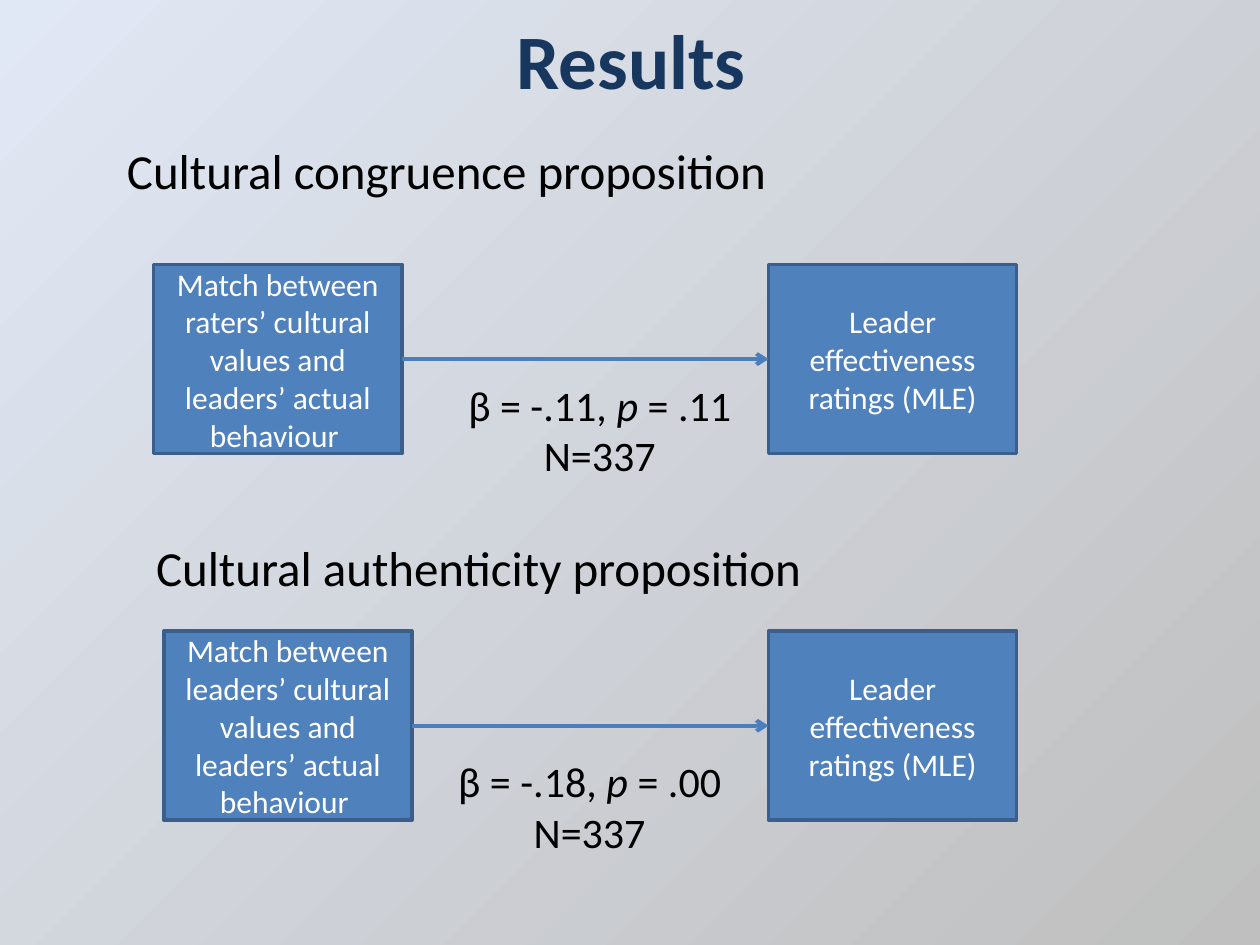
from lxml.etree import SubElement
from pptx import Presentation
from pptx.dml.color import RGBColor
from pptx.enum.shapes import MSO_CONNECTOR, MSO_SHAPE
from pptx.enum.text import MSO_ANCHOR, MSO_AUTO_SIZE, PP_ALIGN
from pptx.oxml.ns import qn
from pptx.util import Inches, Pt

BOX_WIDTH, BOX_HEIGHT = 1.97, 1.5
OUTCOME_LEFT = 6.1
OUTCOME = "Leader effectiveness ratings (MLE)"

# Each row: heading and its place, predictor and its place, statistics and their place
PROPOSITIONS = [
    dict(heading="Cultural congruence proposition", heading_at=(0.91, 1.07, 5.33, 0.57),
         predictor="Match between raters’ cultural values and leaders’ actual behaviour ",
         predictor_left=1.22, top=2.1, beta="-.11", p_value=".11",
         statistics_at=(3.5, 2.96, 2.52, 0.91)),
    dict(heading="Cultural authenticity proposition", heading_at=(1.14, 4.22, 5.47, 0.57),
         predictor="Match between leaders’ cultural values and leaders’ actual behaviour ",
         predictor_left=1.3, top=5.01, beta="-.18", p_value=".00",
         statistics_at=(3.5, 5.95, 2.36, 0.91)),
]


def color(hex_string):
    return RGBColor.from_string(hex_string)


def inches(lengths):
    return [Inches(length) for length in lengths]


def write(frame, lines, size, ink="000000", bold=None, align=PP_ALIGN.CENTER,
          anchor=MSO_ANCHOR.TOP, wrap=True):
    """Fill a text frame; each line is a list of (text, italic) runs."""
    frame.word_wrap = wrap
    frame.vertical_anchor = anchor
    for index, line in enumerate(lines):
        paragraph = frame.paragraphs[0] if index == 0 else frame.add_paragraph()
        paragraph.alignment = align
        for text, italic in line:
            run = paragraph.add_run()
            run.text = text
            font = run.font
            font.name, font.size, font.bold, font.italic = "Calibri", Pt(size), bold, italic
            font.color.rgb = color(ink)


def paint_background(slide):
    """Radial gradient that spreads from the bottom right corner."""
    fill = slide.background.fill
    fill.gradient()
    near, far = fill.gradient_stops
    near.position, far.position = 0, 1
    near.color.rgb, far.color.rgb = color("BFBFBF"), color("E1E8F5")
    gradient = slide.element.find(".//" + qn("a:gradFill"))
    SubElement(gradient.find(".//" + qn("a:srgbClr")), qn("a:alpha"), val="34000")
    gradient.remove(gradient.find(qn("a:lin")))
    circle = SubElement(gradient, qn("a:path"), path="circle")
    SubElement(circle, qn("a:fillToRect"), l="100000", t="100000")


def add_title(slide, text):
    title = slide.shapes.title
    title.left, title.top, title.width, title.height = inches((0.51, 0, 9, 0.93))
    write(title.text_frame, [[(text, None)]], 44, ink="17375E", bold=True,
          anchor=MSO_ANCHOR.MIDDLE)


def add_variable(slide, text, left, top):
    box = slide.shapes.add_shape(MSO_SHAPE.RECTANGLE,
                                 *inches((left, top, BOX_WIDTH, BOX_HEIGHT)))
    box.shadow.inherit = False
    box.fill.solid()
    box.fill.fore_color.rgb = color("4F81BD")
    box.line.color.rgb = color("3A5F8C")
    box.line.width = Pt(2)
    write(box.text_frame, [[(text, None)]], 18, ink="FFFFFF", anchor=MSO_ANCHOR.MIDDLE)


def add_arrow(slide, start, end, y):
    arrow = slide.shapes.add_connector(MSO_CONNECTOR.STRAIGHT, *inches((start, y, end, y)))
    arrow.line.color.rgb = color("4B7EBC")
    arrow.line.width = Pt(2.25)
    SubElement(arrow.line._get_or_add_ln(), qn("a:tailEnd"), type="arrow")
    SubElement(arrow._element.spPr, qn("a:effectLst"))


def add_label(slide, lines, place, size, **text_format):
    label = slide.shapes.add_textbox(*inches(place))
    write(label.text_frame, lines, size, **text_format)
    label.text_frame.auto_size = MSO_AUTO_SIZE.SHAPE_TO_FIT_TEXT


def add_proposition(slide, heading, heading_at, predictor, predictor_left, top,
                    beta, p_value, statistics_at):
    add_variable(slide, predictor, predictor_left, top)
    add_variable(slide, OUTCOME, OUTCOME_LEFT, top)
    add_arrow(slide, predictor_left + BOX_WIDTH, OUTCOME_LEFT, top + BOX_HEIGHT / 2)
    statistics = [[(f"β = {beta}, ", None), ("p", True), (f" = {p_value}", None)],
                  [("N=337", None)]]
    add_label(slide, statistics, statistics_at, 24)
    add_label(slide, [[(heading, None)]], heading_at, 28, align=PP_ALIGN.LEFT, wrap=False)


def main():
    presentation = Presentation()
    presentation.slide_width, presentation.slide_height = inches((10, 7.5))
    slide = presentation.slides.add_slide(presentation.slide_layouts[5])
    paint_background(slide)
    add_title(slide, "Results")
    for proposition in PROPOSITIONS:
        add_proposition(slide, **proposition)
    presentation.save("out.pptx")


if __name__ == "__main__":
    main()
